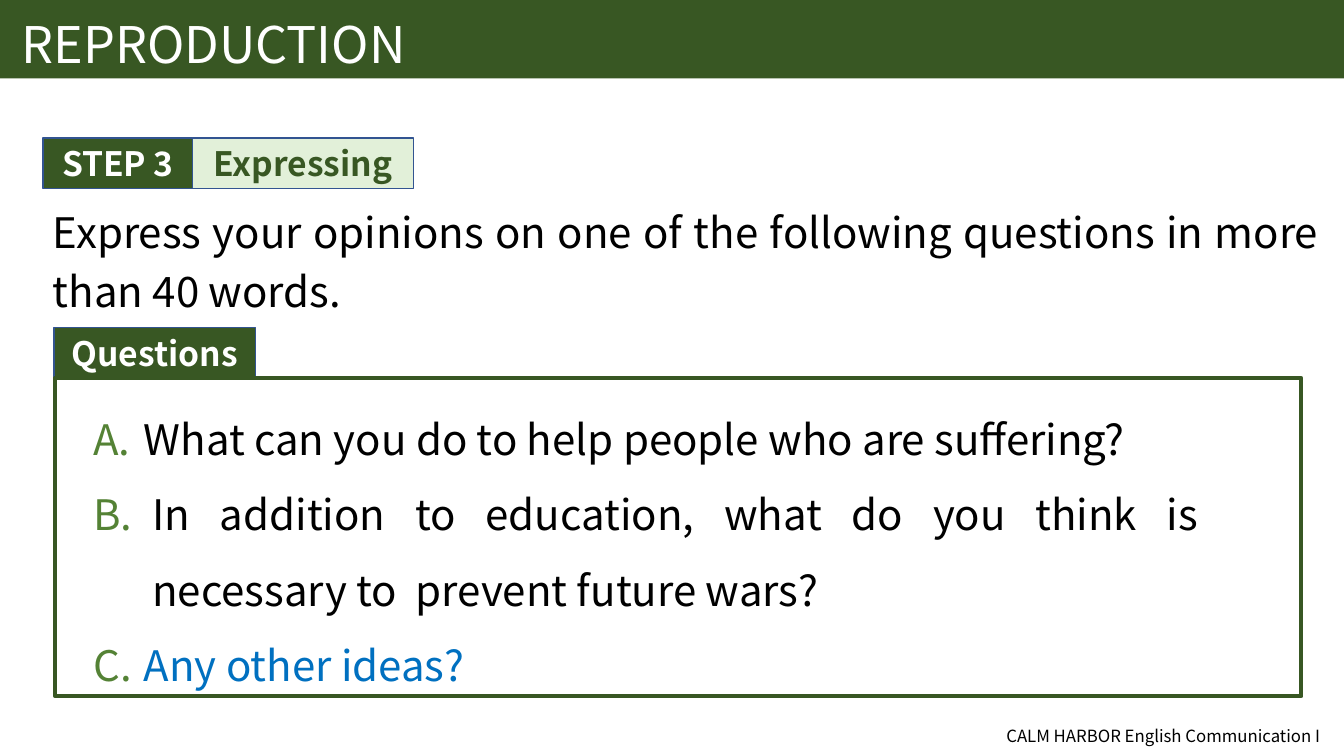
from lxml import etree
from pptx import Presentation
from pptx.dml.color import RGBColor
from pptx.enum.shapes import MSO_SHAPE
from pptx.enum.text import MSO_ANCHOR, PP_ALIGN
from pptx.oxml.ns import qn
from pptx.util import Pt

RECTANGLE = MSO_SHAPE.RECTANGLE
TOP, MIDDLE, BOTTOM = MSO_ANCHOR.TOP, MSO_ANCHOR.MIDDLE, MSO_ANCHOR.BOTTOM
LEFT, CENTER, JUSTIFY = PP_ALIGN.LEFT, PP_ALIGN.CENTER, PP_ALIGN.JUSTIFY

DARK_GREEN = RGBColor(0x38, 0x57, 0x23)
MID_GREEN = RGBColor(0x54, 0x82, 0x35)
PALE_GREEN = RGBColor(0xE2, 0xF0, 0xD9)
NAVY = RGBColor(0x32, 0x54, 0x91)
BLUE = RGBColor(0x00, 0x70, 0xC0)
BLACK = RGBColor(0x00, 0x00, 0x00)
WHITE = RGBColor(0xFF, 0xFF, 0xFF)

SLIDE_WIDTH, SLIDE_HEIGHT = 960, 540
LABEL_HEIGHT = 36
HANGING_INDENT = 42
TAB_STOP = 36


class SlideBuilder:
    font = "Noto Sans CJK JP"
    body_size = 30

    def __init__(self, page):
        self.page = page

    def style(self, span, size, color, bold=False):
        span.font.name = self.font
        span.font.size = Pt(size)
        span.font.color.rgb = color
        span.font.bold = bold

    def set_text(self, box, text, size, color, align, anchor, bold=False):
        frame = box.text_frame
        frame.word_wrap = True
        frame.vertical_anchor = anchor
        frame.text = text
        para = frame.paragraphs[0]
        para.alignment = align
        self.style(para.runs[0], size, color, bold)
        return para

    def panel(self, left, top, width, height, fill=None, line=None, weight=1):
        box = self.page.shapes.add_shape(
            RECTANGLE, Pt(left), Pt(top), Pt(width), Pt(height))
        box.shadow.inherit = False
        if fill is None:
            box.fill.background()
        else:
            box.fill.solid()
            box.fill.fore_color.rgb = fill
        if line is None:
            box.line.fill.background()
        else:
            box.line.color.rgb = line
            box.line.width = Pt(weight)
        return box

    def label(self, left, top, width, text, fill, color):
        box = self.panel(left, top, width, LABEL_HEIGHT, fill, NAVY)
        self.set_text(box, text, 24, color, CENTER, MIDDLE, bold=True)
        return box

    def caption(self, left, top, width, height, text):
        box = self.page.shapes.add_textbox(
            Pt(left), Pt(top), Pt(width), Pt(height))
        self.set_text(box, text, 12, BLACK, CENTER, MIDDLE)

    def questions(self, box, items):
        frame = box.text_frame
        frame.word_wrap = True
        frame.vertical_anchor = TOP
        for index, (letter, text, color, hanging) in enumerate(items):
            para = frame.add_paragraph() if index else frame.paragraphs[0]
            para.alignment = JUSTIFY
            para.line_spacing = 1.5
            for words, tint in ((letter + "\t", MID_GREEN), (text, color)):
                span = para.add_run()
                span.text = words
                self.style(span, self.body_size, tint)
            properties = para._p.get_or_add_pPr()
            if hanging:
                properties.set("marL", str(Pt(HANGING_INDENT)))
                properties.set("indent", str(-Pt(HANGING_INDENT)))
            else:
                tabs = etree.SubElement(properties, qn("a:tabLst"))
                etree.SubElement(tabs, qn("a:tab"), pos=str(Pt(TAB_STOP)), algn="l")

    def group(self, *boxes):
        self.page.shapes.add_group_shape(boxes)


def main():
    deck = Presentation()
    deck.slide_width, deck.slide_height = Pt(SLIDE_WIDTH), Pt(SLIDE_HEIGHT)
    builder = SlideBuilder(deck.slides.add_slide(deck.slide_layouts[6]))

    # Footer and title band
    builder.caption(702, 511, 258, 29, "CALM HARBOR English Communication I")
    band = builder.panel(0, 0, SLIDE_WIDTH, 56, DARK_GREEN)
    builder.set_text(band, "REPRODUCTION", 36, WHITE, LEFT, BOTTOM)
    band.text_frame.margin_left = Pt(15.5)

    # Questions with their frame
    question_box = builder.panel(59.6, 273.6, 803.6, 221, WHITE)
    builder.questions(question_box, [
        ("A.", "What can you do to help people who are suffering?", BLACK, False),
        ("B.", "In addition to education, what do you think is necessary to  "
               "prevent future wars?", BLACK, True),
        ("C.", "Any other ideas?", BLUE, False),
    ])
    builder.group(
        builder.label(38.5, 234, 144, "Questions", DARK_GREEN, WHITE),
        builder.panel(39.5, 270, 890, 227.3, line=DARK_GREEN, weight=3))

    # Step heading
    builder.group(
        builder.label(30.7, 98.5, 107, "STEP 3", DARK_GREEN, WHITE),
        builder.label(137.7, 98.5, 157.6, "Expressing", PALE_GREEN, DARK_GREEN))

    # Instruction
    instruction = builder.panel(30.7, 138.2, 918.7, 92, WHITE)
    para = builder.set_text(
        instruction, "Express your opinions on one of the following questions "
        "in more than 40 words.", builder.body_size, BLACK, JUSTIFY, TOP)
    para.line_spacing = Pt(42)

    deck.save("out.pptx")


if __name__ == "__main__":
    main()
